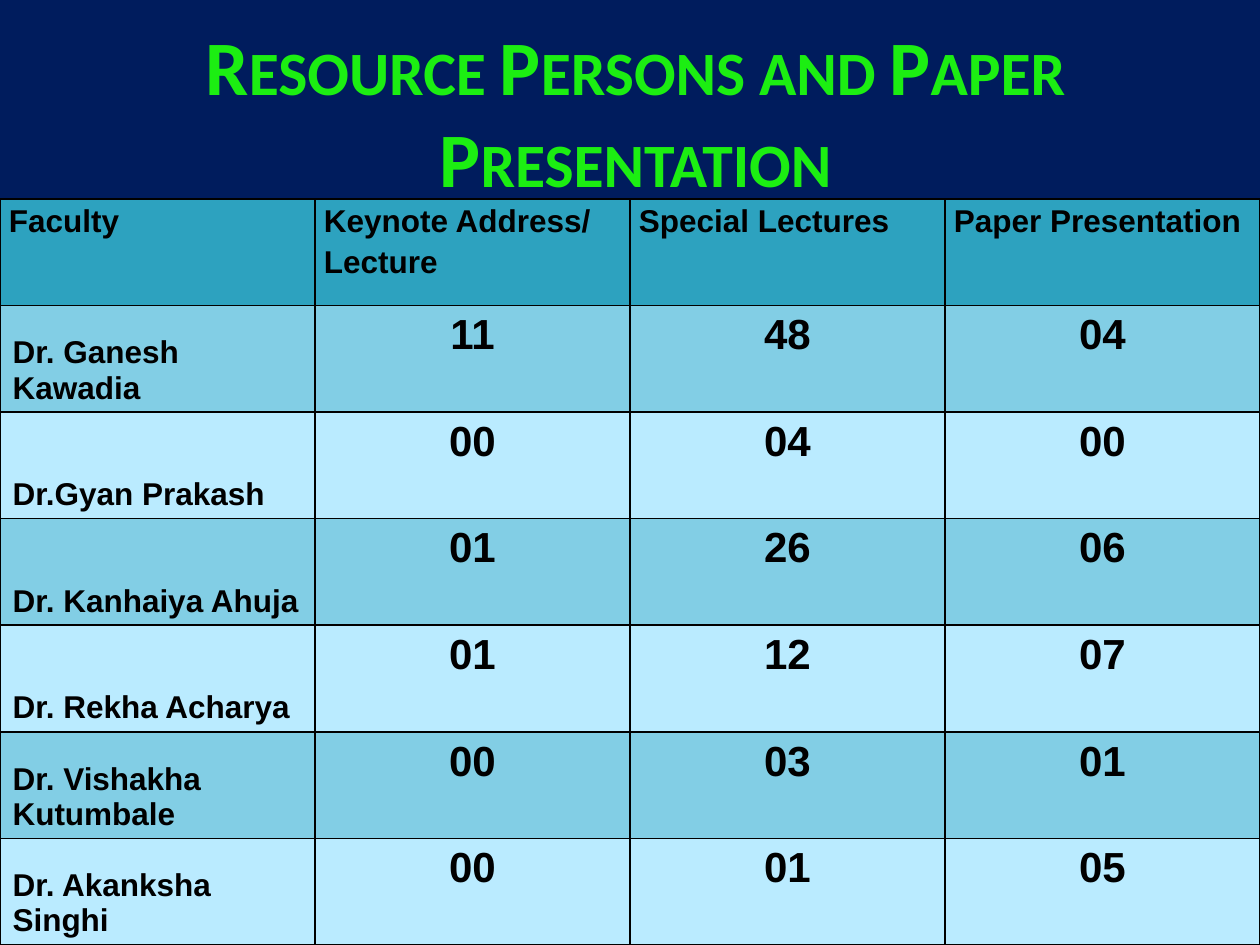
from lxml.etree import SubElement
from pptx import Presentation
from pptx.dml.color import RGBColor
from pptx.enum.text import MSO_ANCHOR as Anchor, MSO_AUTO_SIZE as AutoSize, PP_ALIGN as Align
from pptx.oxml.ns import qn
from pptx.util import Pt

TITLE = "Resource Persons and Paper Presentation"
HEADINGS = ("Faculty", "Keynote Address/ Lecture", "Special Lectures", "Paper Presentation")
FACULTY = [
    ("Dr. Ganesh Kawadia", "11", "48", "04"),
    ("Dr.Gyan Prakash", "00", "04", "00"),
    ("Dr. Kanhaiya Ahuja", "01", "26", "06"),
    ("Dr. Rekha Acharya", "01", "12", "07"),
    ("Dr. Vishakha Kutumbale", "00", "03", "01"),
    ("Dr. Akanksha Singhi", "00", "01", "05"),
]

NAVY = RGBColor(0x00, 0x1C, 0x5D)
GREEN = RGBColor(0x1C, 0xEE, 0x12)
TEAL = RGBColor(0x2D, 0xA2, 0xBF)
BAND_DARK = RGBColor(0x82, 0xCE, 0xE5)
BAND_LIGHT = RGBColor(0xBA, 0xEB, 0xFF)
BLACK = RGBColor(0, 0, 0)

PAGE_W, PAGE_H = 1260, 945
TABLE_TOP = 199
HEADER_INSET = 9


def px(length):
    return round(length * 914400 / 126)


def style_font(font, name, size, color):
    font.name = name
    font.size = Pt(size)
    font.bold = True
    font.color.rgb = color


def add_borders(cell):
    """Draw all four edges; they must precede the fill in the cell properties."""
    props = cell._tc.get_or_add_tcPr()
    for index, side in enumerate(("lnL", "lnR", "lnT", "lnB")):
        line = SubElement(props, qn(f"a:{side}"), w=str(Pt(1)))
        color = SubElement(SubElement(line, qn("a:solidFill")), qn("a:srgbClr"))
        color.set("val", str(BLACK))
        props.insert(index, line)


def fill_cell(cell, text, row, column):
    is_header, is_name = row == 0, column == 0
    cell.text_frame.text = text
    para = cell.text_frame.paragraphs[0]
    size = 18 if is_header or is_name else 24
    style_font(para.runs[0].font, "Arial", size, BLACK)
    if is_header:
        para.line_spacing = 1.15
        cell.margin_left = cell.margin_right = px(HEADER_INSET)
        cell.margin_top = cell.margin_bottom = 0
    elif is_name:
        cell.vertical_anchor = Anchor.BOTTOM
    else:
        para.alignment = Align.CENTER
    cell.fill.solid()
    cell.fill.fore_color.rgb = TEAL if is_header else BAND_DARK if row % 2 else BAND_LIGHT
    add_borders(cell)


def add_title(page):
    title = page.shapes.title
    title.left, title.top, title.width, title.height = map(px, (32, 32, 1207, 157))
    frame = title.text_frame
    frame.text = TITLE
    frame.word_wrap = True
    frame.auto_size = AutoSize.NONE
    frame.vertical_anchor = Anchor.MIDDLE
    para = frame.paragraphs[0]
    para.alignment = Align.CENTER
    span = para.runs[0]
    style_font(span.font, "Calibri", 44, GREEN)
    span._r.get_or_add_rPr().set("cap", "small")


def add_faculty_table(page):
    rows = [HEADINGS, *FACULTY]
    height = PAGE_H - TABLE_TOP
    table = page.shapes.add_table(
        len(rows), len(HEADINGS), 0, px(TABLE_TOP), px(PAGE_W), px(height)
    ).table
    for table_row in table.rows:
        table_row.height = px(height / len(rows))
    for row, values in enumerate(rows):
        for column, text in enumerate(values):
            fill_cell(table.cell(row, column), text, row, column)


def main():
    deck = Presentation()
    deck.slide_width, deck.slide_height = px(PAGE_W), px(PAGE_H)
    page = deck.slides.add_slide(deck.slide_layouts.get_by_name("Title Only"))
    page.background.fill.solid()
    page.background.fill.fore_color.rgb = NAVY
    add_title(page)
    add_faculty_table(page)
    deck.save("out.pptx")


if __name__ == "__main__":
    main()
